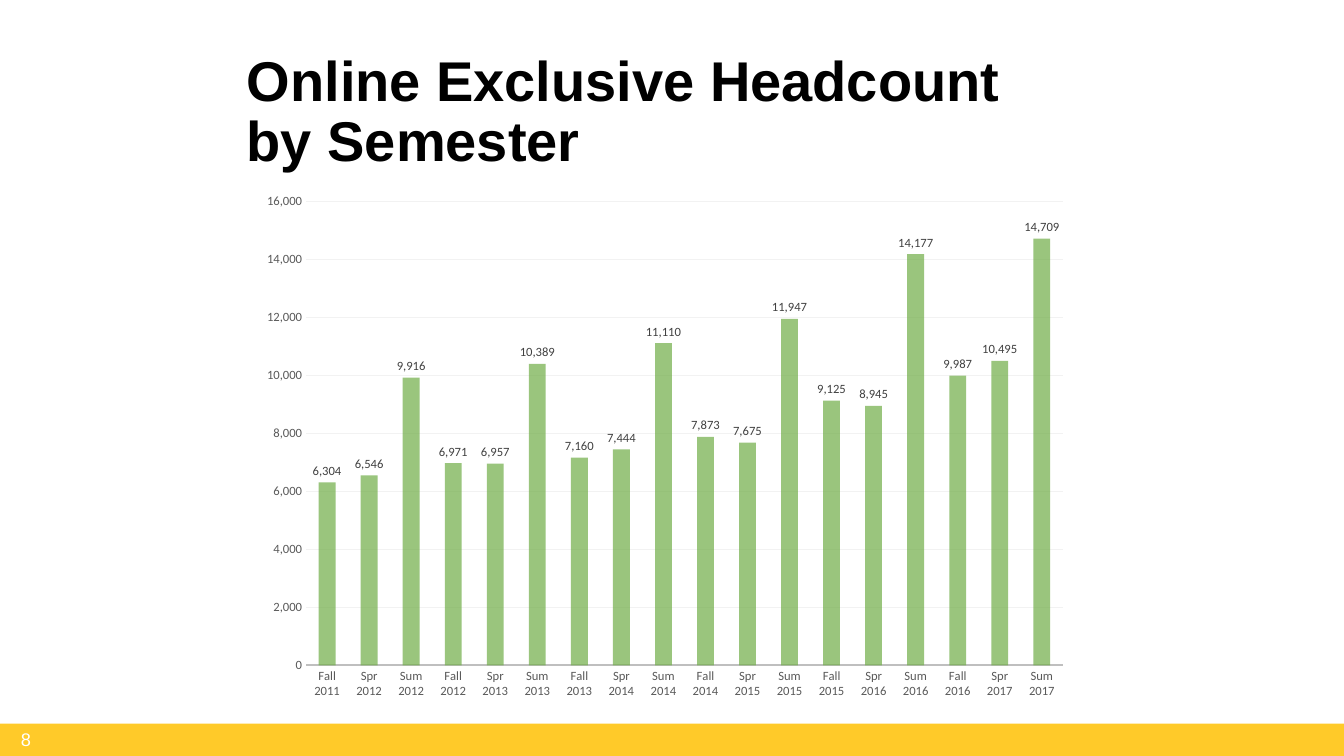
from lxml import etree
from pptx import Presentation
from pptx import util as u
from pptx.chart.data import CategoryChartData
from pptx.dml.color import RGBColor
from pptx.enum import chart as charts, shapes, text
from pptx.oxml import parse_xml
from pptx.oxml.ns import nsdecls, qn

TITLE = "Online Exclusive Headcount by Semester"
PAGE_NUMBER = "8"
HEADCOUNT = [
    ("Fall 2011", 6304), ("Spr 2012", 6546), ("Sum 2012", 9916),
    ("Fall 2012", 6971), ("Spr 2013", 6957), ("Sum 2013", 10389),
    ("Fall 2013", 7160), ("Spr 2014", 7444), ("Sum 2014", 11110),
    ("Fall 2014", 7873), ("Spr 2015", 7675), ("Sum 2015", 11947),
    ("Fall 2015", 9125), ("Spr 2016", 8945), ("Sum 2016", 14177),
    ("Fall 2016", 9987), ("Spr 2017", 10495), ("Sum 2017", 14709),
]

WIDTH, HEIGHT = 13.33, 7.5
FOOTER_TOP = 7.18
TITLE_AREA = (2.35, 0.4, 7.76, 1.45)
NUMBER_AREA = (0.11, FOOTER_TOP, 0.8, 0.31)
CHART_AREA = (2.46, 1.82, 8.23, 5.22)
FOOTER_AREA = (0, FOOTER_TOP, WIDTH, HEIGHT - FOOTER_TOP)
PLOT_SHARES = {"x": 0.07, "y": 0.034, "w": 0.912, "h": 0.882}

BLACK = RGBColor(0x00, 0x00, 0x00)
WHITE = RGBColor(0xFF, 0xFF, 0xFF)
GOLD = RGBColor(0xFF, 0xCA, 0x29)
GREEN = RGBColor(0x70, 0xAD, 0x47)
AXIS_TEXT = RGBColor(0x59, 0x59, 0x59)
LABEL_TEXT = RGBColor(0x40, 0x40, 0x40)
AXIS_LINE = RGBColor(0xBF, 0xBF, 0xBF)
GRID_LINE = RGBColor(0xF2, 0xF2, 0xF2)


def inches(area):
    return [u.Inches(length) for length in area]


def style_font(font, name, size, color, bold=False):
    font.name, font.size, font.bold = name, u.Pt(size), bold
    font.color.rgb = color


def add_text(page, area, words, size, color, bold=False, spacing=None):
    box = page.shapes.add_textbox(*inches(area))
    frame = box.text_frame
    frame.word_wrap = True
    frame.vertical_anchor = text.MSO_ANCHOR.MIDDLE
    para = frame.paragraphs[0]
    para.text = words
    para.line_spacing = spacing
    style_font(para.font, "Arial", size, color, bold)


def add_footer(page):
    band = page.shapes.add_shape(shapes.MSO_SHAPE.RECTANGLE, *inches(FOOTER_AREA))
    band.shadow.inherit = False
    band.fill.solid()
    band.fill.fore_color.rgb = GOLD
    band.line.fill.background()


def style_axes(chart):
    for axis in (chart.category_axis, chart.value_axis):
        axis.major_tick_mark = axis.minor_tick_mark = charts.XL_TICK_MARK.NONE
        style_font(axis.tick_labels.font, "Calibri", 9, AXIS_TEXT)
    chart.category_axis.format.line.color.rgb = AXIS_LINE
    chart.category_axis.format.line.width = u.Pt(1.25)
    values = chart.value_axis
    values.minimum_scale, values.maximum_scale, values.major_unit = 0, 16000, 2000
    values.tick_labels.number_format = "#,##0"
    values.tick_labels.number_format_is_linked = False
    values.format.line.fill.background()
    values.major_gridlines.format.line.color.rgb = GRID_LINE
    values.major_gridlines.format.line.width = u.Pt(0.75)


def place_plot(chart):
    area = chart.element.find(".//" + qn("c:plotArea"))
    for old in area.findall(qn("c:layout")):
        area.remove(old)
    layout = parse_xml(f"<c:layout {nsdecls('c')}><c:manualLayout/></c:layout>")
    settings = {"layoutTarget": "inner", "xMode": "edge", "yMode": "edge", **PLOT_SHARES}
    for name, value in settings.items():
        etree.SubElement(layout[0], qn("c:" + name)).set("val", str(value))
    area.insert(0, layout)


def add_headcount_chart(page):
    data = CategoryChartData(number_format="#,##0")
    data.categories = [semester for semester, _ in HEADCOUNT]
    data.add_series("Series 1", [count for _, count in HEADCOUNT])
    chart = page.shapes.add_chart(
        charts.XL_CHART_TYPE.COLUMN_CLUSTERED, *inches(CHART_AREA), data).chart
    chart.has_legend = chart.has_title = False
    style_font(chart.font, "Calibri", 10, BLACK)
    style_axes(chart)
    place_plot(chart)

    plot = chart.plots[0]
    plot.gap_width = 150
    plot.vary_by_categories = False
    bars = plot.series[0]
    bars.format.fill.solid()
    bars.format.fill.fore_color.rgb = GREEN
    color = bars.format.fill._xPr.find(".//" + qn("a:srgbClr"))
    etree.SubElement(color, qn("a:alpha")).set("val", "70000")

    labels = bars.data_labels
    labels.show_value = True
    labels.position = charts.XL_LABEL_POSITION.OUTSIDE_END
    labels.number_format = "#,##0"
    labels.number_format_is_linked = False
    style_font(labels.font, "Calibri", 9, LABEL_TEXT)


def main():
    deck = Presentation()
    deck.slide_width, deck.slide_height = inches((WIDTH, HEIGHT))
    page = deck.slides.add_slide(deck.slide_layouts[6])
    add_footer(page)
    add_text(page, TITLE_AREA, TITLE, 40, BLACK, bold=True, spacing=0.9)
    add_text(page, NUMBER_AREA, PAGE_NUMBER, 13, WHITE)
    add_headcount_chart(page)
    deck.save("out.pptx")


if __name__ == "__main__":
    main()
